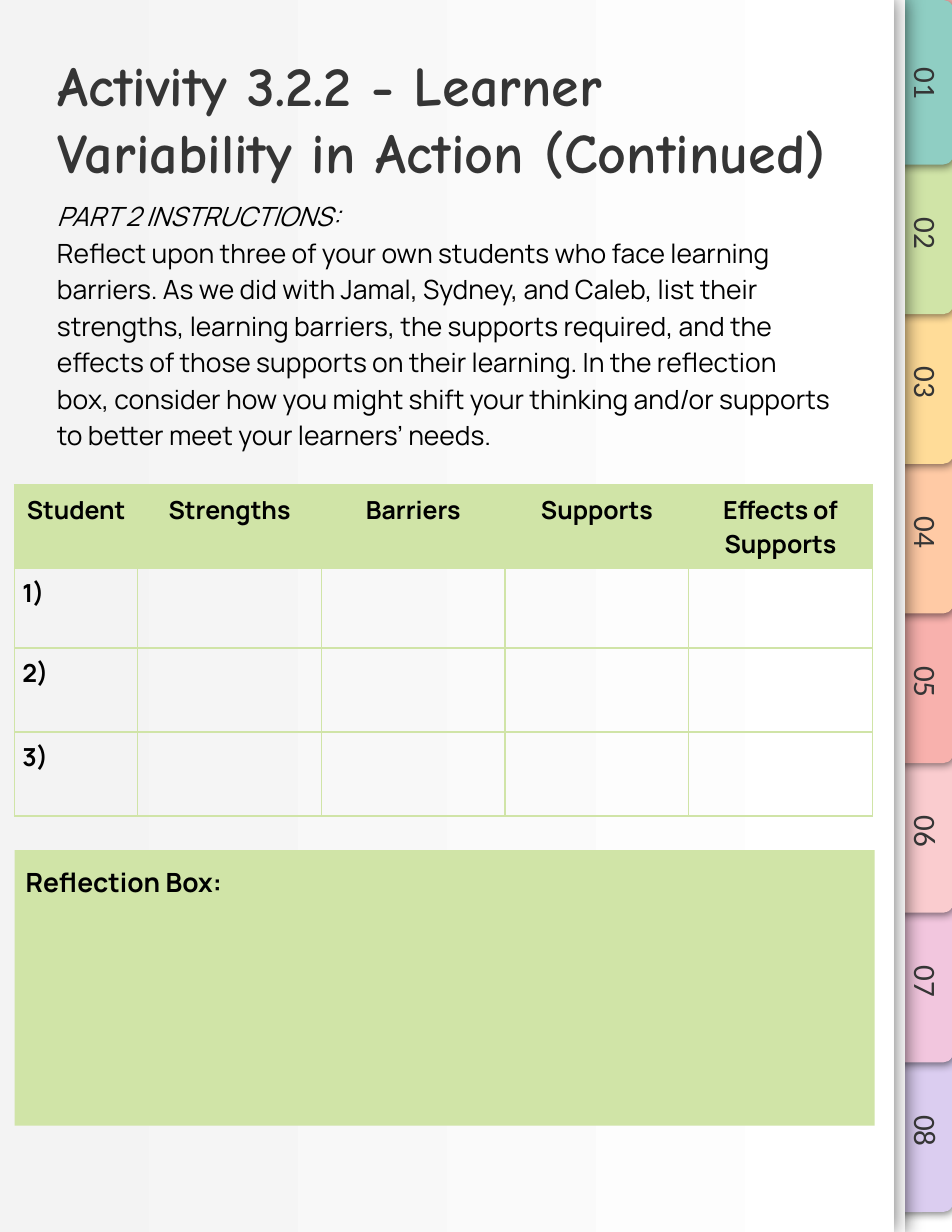
from lxml.etree import SubElement as Sub
from pptx import Presentation
from pptx.dml.color import RGBColor as RGB
from pptx.enum.shapes import MSO_SHAPE as SHAPE
from pptx.enum.text import MSO_ANCHOR as ANCHOR, MSO_AUTO_SIZE as FIT, PP_ALIGN as ALIGN
from pptx.oxml import parse_xml
from pptx.oxml.ns import nsdecls, qn
from pptx.util import Inches, Pt

# Content
TITLE = "Activity 3.2.2 - Learner Variability in Action (Continued)"
PART = "PART 2 INSTRUCTIONS:"
TASK = ("Reflect upon three of your own students who face learning barriers. "
        "As we did with Jamal, Sydney, and Caleb, list their strengths, learning "
        "barriers, the supports required, and the effects of those supports on "
        "their learning. In the reflection box, consider how you might shift your "
        "thinking and/or supports to better meet your learners’ needs.")
HEADS = ["Student", "Strengths", "Barriers", "Supports", "Effects of Supports"]
ROWS = [[f"{n})", "", "", "", ""] for n in (1, 2, 3)]
NOTE = "Reflection Box:"

# Colours
WHITE, BLACK = RGB(255, 255, 255), RGB(0, 0, 0)
INK, PALE = RGB(0x35, 0x35, 0x35), RGB(0xF3, 0xF3, 0xF3)
GREEN, CORAL = RGB(0xD0, 0xE4, 0xA7), RGB(0xF8, 0xB1, 0xAD)
TABS = [RGB(0x8F, 0xCE, 0xC3), GREEN, RGB(0xFF, 0xDC, 0x98), RGB(0xFF, 0xCA, 0xA5),
        CORAL, RGB(0xFA, 0xCC, 0xCF), RGB(0xF2, 0xC6, 0xDE), RGB(0xDB, 0xCD, 0xF0)]

# Text formats
HEAD = dict(size=Pt(36), name="Comic Neue", bold=True, color=INK)
BODY = dict(size=Pt(17), name="Manrope", color=BLACK)
CELL = dict(BODY, size=Pt(16), bold=True)
LABEL = dict(size=Pt(20), name="Calibri", color=INK)

# Measures in inches
STEP = 1.336
COLS = [1.1] + [1.64] * 4
HIGH = [0.71, 0.71, 0.75, 0.75]


def inch(*nums):
    return [Inches(n) for n in nums]


def write(par, text, form, **more):
    run = par.add_run()
    run.text = text
    for key, val in {**form, **more}.items():
        if key == "color":
            run.font.color.rgb = val
        else:
            setattr(run.font, key, val)


def frame(box, anchor=ANCHOR.TOP, pad=0.1):
    text = box.text_frame
    form = dict(word_wrap=True, auto_size=FIT.NONE, vertical_anchor=anchor)
    form.update({f"margin_{side}": Inches(pad)
                 for side in ("left", "right", "top", "bottom")})
    for key, val in form.items():
        setattr(text, key, val)
    return text


def block(kind, at, color):
    box = slide.shapes.add_shape(kind, *inch(*at))
    box.shadow.inherit = False
    box.fill.solid()
    box.fill.fore_color.rgb = color
    box.line.fill.background()
    return box


def shade(box, blur, dist, angle):
    glow = Sub(box._element.spPr.find(qn("a:effectLst")), qn("a:outerShdw"),
               blurRad=str(Pt(blur)), dist=str(Pt(dist)),
               dir=str(angle * 60000), algn="bl", rotWithShape="0")
    tint = Sub(glow, qn("a:srgbClr"), val="000000")
    Sub(tint, qn("a:alpha"), val="50000")


def edge(cell, color):
    props = cell._tc.get_or_add_tcPr()
    for spot, side in enumerate("LRTB"):
        props.insert(spot, parse_xml(
            f'<a:ln{side} {nsdecls("a")} w="{Pt(1)}"><a:solidFill>'
            f'<a:srgbClr val="{color}"/></a:solidFill></a:ln{side}>'))


deck = Presentation()
deck.slide_width, deck.slide_height = inch(8.5, 11)
slide = deck.slides.add_slide(deck.slide_layouts[5])
slide.background.fill.solid()
slide.background.fill.fore_color.rgb = CORAL

# Side tabs, the lowest at the back
strip = block(SHAPE.RECTANGLE, (8.08, 8.58, 0.42, 2.42), WHITE)
strip.line.color.rgb = WHITE
strip.line.width = Pt(0.75)
for i, color in reversed(list(enumerate(TABS))):
    tab = block(SHAPE.ROUND_2_SAME_RECTANGLE, (7.51, 0.47 + i * STEP, 1.47, 0.53), color)
    tab.rotation = 90
    shade(tab, 5.6, 1.5, 61)

# Paper sheets
for left in (0.1, 0):
    sheet = block(SHAPE.RECTANGLE, (left, 0, 7.98, 11), WHITE)
    shade(sheet, 12.4, 0.8, 0)
sheet.fill.gradient()
sheet.fill.gradient_angle = 0
for stop, color in zip(sheet.fill.gradient_stops, (PALE, WHITE)):
    stop.color.rgb = color

# Tab numbers
for i in range(len(TABS)):
    box = slide.shapes.add_textbox(*inch(7.6, 0.43 + i * STEP, 1.44, 0.63))
    box.rotation = 90
    par = frame(box, ANCHOR.BOTTOM).paragraphs[0]
    par.alignment = ALIGN.CENTER
    write(par, f"{i + 1:02}", LABEL)

# Title, raised above the sheets
title = slide.shapes.title
title.left, title.top, title.width, title.height = inch(0.41, 0.35, 7.12, 0.63)
slide.shapes._spTree.append(title._element)
par = frame(title).paragraphs[0]
par.alignment = ALIGN.LEFT
write(par, TITLE, HEAD)

# Instructions
text = frame(slide.shapes.add_textbox(*inch(0.41, 1.69, 7.12, 2.46)))
write(text.paragraphs[0], PART, BODY, italic=True)
par = text.add_paragraph()
par.line_spacing = 1.15
write(par, TASK, BODY)

# Student table
grid = slide.shapes.add_table(len(HIGH), len(COLS),
                              *inch(0.13, 4.33, sum(COLS), sum(HIGH))).table
grid.horz_banding = grid.first_row = False
for col, wide in zip(grid.columns, COLS):
    col.width = Inches(wide)
for r, (high, words) in enumerate(zip(HIGH, [HEADS] + ROWS)):
    grid.rows[r].height = Inches(high)
    for c, word in enumerate(words):
        cell = grid.cell(r, c)
        for side in ("left", "right", "top", "bottom"):
            setattr(cell, f"margin_{side}", Inches(0.07))
        if r == 0:
            cell.fill.solid()
            cell.fill.fore_color.rgb = GREEN
        else:
            cell.fill.background()
        edge(cell, GREEN)
        if word:
            par = cell.text_frame.paragraphs[0]
            par.alignment = ALIGN.LEFT if r else ALIGN.CENTER
            write(par, word, CELL)

# Reflection box
box = block(SHAPE.RECTANGLE, (0.13, 7.59, 7.68, 2.46), GREEN)
par = frame(box).paragraphs[0]
par.alignment = ALIGN.LEFT
par.line_spacing = 1.15
write(par, NOTE, BODY, bold=True)

deck.save("out.pptx")
